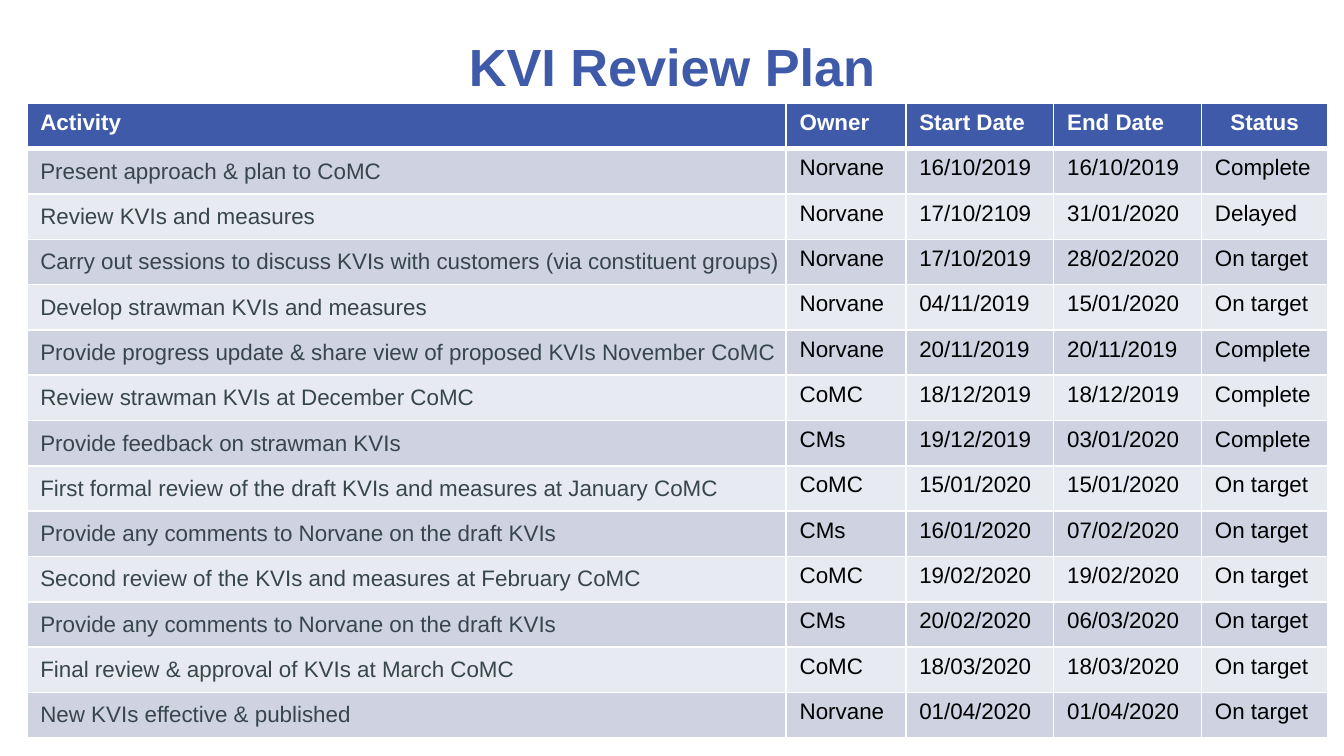
from lxml.etree import SubElement
from pptx import Presentation
from pptx.dml.color import RGBColor
from pptx.enum.text import MSO_ANCHOR, PP_ALIGN
from pptx.oxml.ns import qn
from pptx.util import Inches, Pt

BLUE, WHITE, BLACK, SLATE = "3E5AA8", "FFFFFF", "000000", "37464D"
BANDS = ("CED2E1", "E8EAF1")
SLIDE_WIDTH = 10
COLUMN_WIDTHS = (5.65, 0.89, 1.1, 1.1, 0.94)
TABLE_HEIGHT = 4.72

HEADINGS = ("Activity", "Owner", "Start Date", "End Date", "Status")
ACTIVITIES = (
    ("Present approach & plan to CoMC", "Norvane", "16/10/2019", "16/10/2019", "Complete"),
    ("Review KVIs and measures", "Norvane", "17/10/2109", "31/01/2020", "Delayed"),
    ("Carry out sessions to discuss KVIs with customers (via constituent groups)",
     "Norvane", "17/10/2019", "28/02/2020", "On target"),
    ("Develop strawman KVIs and measures", "Norvane", "04/11/2019", "15/01/2020", "On target"),
    ("Provide progress update & share view of proposed KVIs November CoMC",
     "Norvane", "20/11/2019", "20/11/2019", "Complete"),
    ("Review strawman KVIs at December CoMC", "CoMC", "18/12/2019", "18/12/2019", "Complete"),
    ("Provide feedback on strawman KVIs", "CMs", "19/12/2019", "03/01/2020", "Complete"),
    ("First formal review of the draft KVIs and measures at January CoMC",
     "CoMC", "15/01/2020", "15/01/2020", "On target"),
    ("Provide any comments to Norvane on the draft KVIs",
     "CMs", "16/01/2020", "07/02/2020", "On target"),
    ("Second review of the KVIs and measures at February CoMC",
     "CoMC", "19/02/2020", "19/02/2020", "On target"),
    ("Provide any comments to Norvane on the draft KVIs",
     "CMs", "20/02/2020", "06/03/2020", "On target"),
    ("Final review & approval of KVIs at March CoMC",
     "CoMC", "18/03/2020", "18/03/2020", "On target"),
    ("New KVIs effective & published", "Norvane", "01/04/2020", "01/04/2020", "On target"),
)


def rgb(value):
    return RGBColor.from_string(value)


def write_text(frame, text, size=12, color=BLACK, bold=False, align=PP_ALIGN.LEFT):
    paragraph = frame.paragraphs[0]
    paragraph.alignment = align
    span = paragraph.add_run()
    span.text = text
    span.font.name = "Arial"
    span.font.size = Pt(size)
    span.font.bold = bold
    span.font.color.rgb = rgb(color)


def set_borders(cell, top=1, bottom=1):
    """Draw white cell borders; must run before the cell is filled."""
    properties = cell._tc.get_or_add_tcPr()
    for side, width in (("L", 1), ("R", 1), ("T", top), ("B", bottom)):
        line = SubElement(properties, qn(f"a:ln{side}"), w=str(Pt(width)))
        fill = SubElement(line, qn("a:solidFill"))
        SubElement(fill, qn("a:srgbClr"), val=WHITE)


def fill_cell(cell, color):
    cell.fill.solid()
    cell.fill.fore_color.rgb = rgb(color)


def add_title(page, text):
    title = page.shapes.title
    title.left, title.top = Inches(0.5), Inches(0.14)
    title.width, title.height = Inches(9), Inches(0.7)
    title.text_frame.vertical_anchor = MSO_ANCHOR.MIDDLE
    write_text(title.text_frame, text, size=28, color=BLUE, bold=True, align=PP_ALIGN.CENTER)


def add_header_row(table):
    for column, heading in enumerate(HEADINGS):
        cell = table.cell(0, column)
        set_borders(cell, bottom=3)
        fill_cell(cell, BLUE)
        align = PP_ALIGN.CENTER if heading == "Status" else PP_ALIGN.LEFT
        write_text(cell.text_frame, heading, color=WHITE, bold=True, align=align)


def add_activity_row(table, row, values):
    for column, value in enumerate(values):
        cell = table.cell(row, column)
        set_borders(cell, top=3 if row == 1 else 1)
        fill_cell(cell, BANDS[(row - 1) % 2])
        if column == 0:
            cell.vertical_anchor = MSO_ANCHOR.MIDDLE
            cell.margin_left = Inches(0.1)
            cell.margin_top = cell.margin_right = cell.margin_bottom = 0
        write_text(cell.text_frame, value, color=SLATE if column == 0 else BLACK)


def add_plan_table(page):
    row_count = len(ACTIVITIES) + 1
    frame = page.shapes.add_table(
        row_count, len(HEADINGS), Inches(0.2), Inches(0.77),
        Inches(sum(COLUMN_WIDTHS)), Inches(TABLE_HEIGHT))
    table = frame.table
    table.horz_banding = False
    for column, width in zip(table.columns, COLUMN_WIDTHS):
        column.width = Inches(width)
    for row in table.rows:
        row.height = Inches(TABLE_HEIGHT / row_count)
    add_header_row(table)
    for row, values in enumerate(ACTIVITIES, start=1):
        add_activity_row(table, row, values)


def main():
    deck = Presentation()
    deck.slide_width = Inches(SLIDE_WIDTH)
    deck.slide_height = Inches(SLIDE_WIDTH * 9 / 16)
    page = deck.slides.add_slide(deck.slide_layouts[5])
    add_title(page, "KVI Review Plan")
    add_plan_table(page)
    deck.save("out.pptx")


if __name__ == "__main__":
    main()
